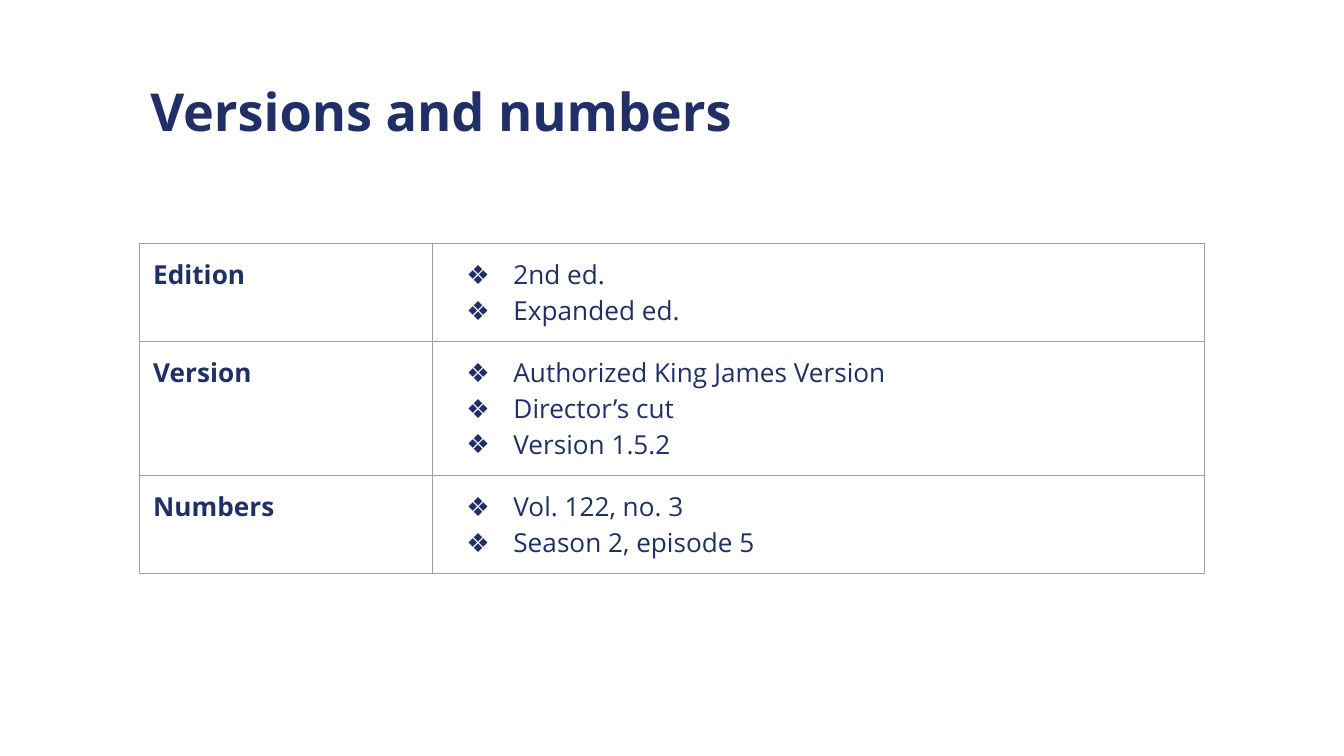
import pptx
import pptx.util
import pptx.dml.color
import pptx.enum.text
import pptx.oxml.ns
import lxml.etree

Inches = pptx.util.Inches
Pt = pptx.util.Pt

COLORS = {"navy": "202F66", "grid": "9E9E9E"}
ROWS = [
    ("Edition", ["2nd ed.", "Expanded ed."]),
    ("Version", ["Authorized King James Version", "Director’s cut", "Version 1.5.2"]),
    ("Numbers", ["Vol. 122, no. 3", "Season 2, episode 5"]),
]


def add_xml(parent, tag, **attributes):
    return lxml.etree.SubElement(parent, pptx.oxml.ns.qn(tag), attributes)


class SlideBuilder:
    font = "Open Sans"
    inset = Inches(0.1)
    line_height = Pt(19.1)

    def __init__(self, s):
        self.s = s

    def format_text(self, p, size, bold):
        for r in p.runs:
            r.font.name = self.font
            r.font.size = Pt(size)
            r.font.bold = bold
            r.font.color.rgb = pptx.dml.color.RGBColor.from_string(COLORS["navy"])

    def set_margins(self, box):
        box.margin_left = box.margin_right = self.inset
        box.margin_top = box.margin_bottom = self.inset

    def title(self, text, left, top, width, height):
        sp = self.s.shapes.add_textbox(
            Inches(left), Inches(top), Inches(width), Inches(height))
        tf = sp.text_frame
        tf.word_wrap = True
        tf.vertical_anchor = pptx.enum.text.MSO_ANCHOR.MIDDLE
        self.set_margins(tf)
        tf.margin_bottom = Inches(0.06)
        tf.text = text
        self.format_text(tf.paragraphs[0], 28, True)

    def bullet(self, p):
        pPr = p._p.get_or_add_pPr()
        pPr.set("marL", str(Inches(0.5)))
        pPr.set("indent", str(Inches(-0.35)))
        add_xml(add_xml(pPr, "a:buClr"), "a:srgbClr", val=COLORS["navy"])
        add_xml(pPr, "a:buFont", typeface=self.font)
        add_xml(pPr, "a:buChar", char="❖")

    def borders(self, cell):
        tcPr = cell._tc.get_or_add_tcPr()
        for side in ("L", "R", "T", "B"):
            line = add_xml(tcPr, f"a:ln{side}", w=str(Pt(0.75)))
            add_xml(add_xml(line, "a:solidFill"), "a:srgbClr", val=COLORS["grid"])

    def cell(self, cell, lines, bulleted):
        self.set_margins(cell)
        self.borders(cell)
        cell.fill.background()
        tf = cell.text_frame
        tf.text = "\n".join(lines)
        for p in tf.paragraphs:
            if bulleted:
                self.bullet(p)
            self.format_text(p, 14, not bulleted)

    def table(self, rows, left, top, widths):
        heights = [2 * self.inset + self.line_height * len(items) for _, items in rows]
        table = self.s.shapes.add_table(
            len(rows), len(widths), Inches(left), Inches(top),
            Inches(sum(widths)), sum(heights)).table
        table.first_row = table.horz_banding = False
        for column, width in zip(table.columns, widths):
            column.width = Inches(width)
        for i, (label, items) in enumerate(rows):
            table.rows[i].height = heights[i]
            self.cell(table.cell(i, 0), [label], False)
            self.cell(table.cell(i, 1), items, True)


def main():
    prs = pptx.Presentation()
    prs.slide_width = Inches(10)
    prs.slide_height = prs.slide_width * 9 // 16
    builder = SlideBuilder(prs.slides.add_slide(prs.slide_layouts[6]))
    builder.title("Versions and numbers", 1.02, 0.49, 7.87, 0.63)
    builder.table(ROWS, 1.04, 1.81, [2.18, 5.74])
    prs.save("out.pptx")


if __name__ == "__main__":
    main()
